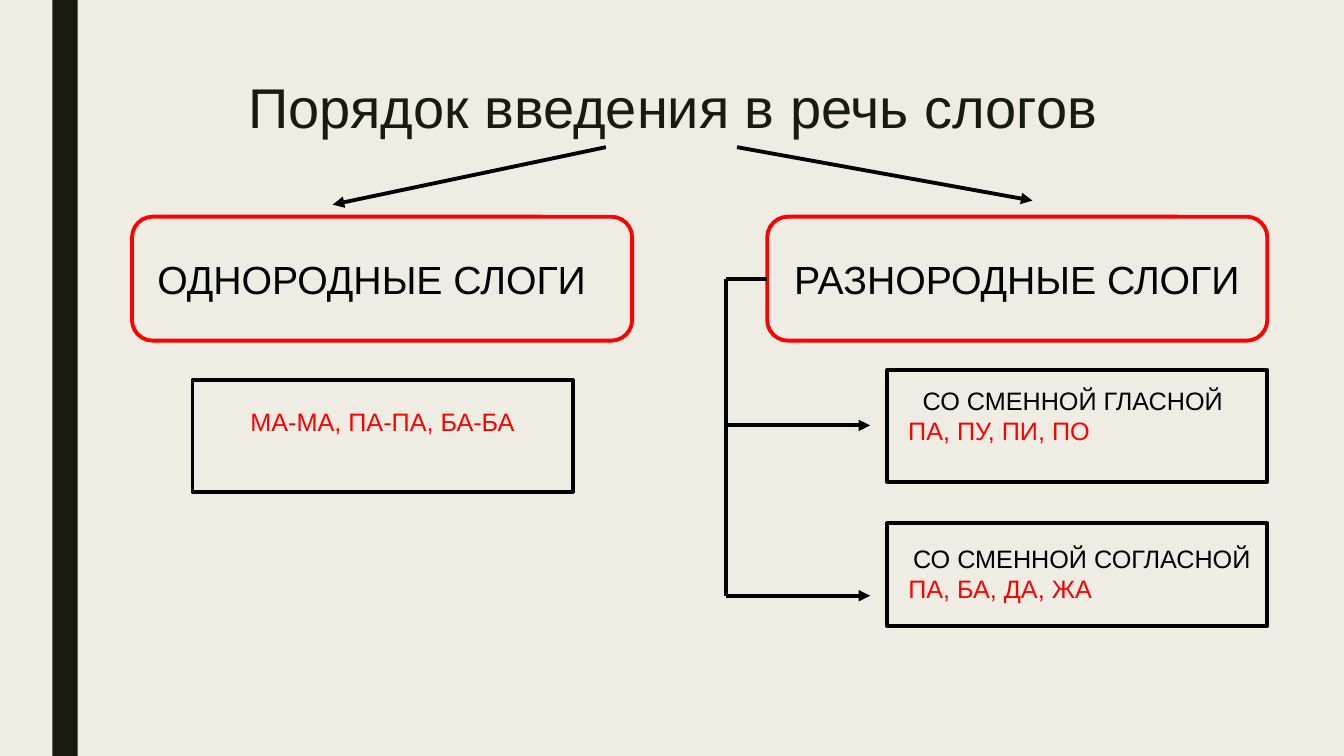
import pptx
import pptx.dml.color
import pptx.enum.shapes
import pptx.enum.text
import pptx.oxml.ns
import pptx.util
from lxml import etree

PX = 9144
SHAPES = pptx.enum.shapes.MSO_SHAPE
ALIGN = pptx.enum.text.PP_ALIGN
AUTO = pptx.enum.text.MSO_AUTO_SIZE
qn = pptx.oxml.ns.qn


def px(*values):
    return [pptx.util.Emu(v * PX) for v in values]


def color(value):
    return pptx.dml.color.RGBColor.from_string(value)


class Deck:
    font = "Arial"
    ink = "000000"
    dark = "191B0E"
    red = "FF0000"
    paper = "EFEDE3"
    line_width = 2.75

    def __init__(self, width, height):
        self.prs = pptx.Presentation()
        self.prs.slide_width, self.prs.slide_height = px(width, height)
        self.s = self.prs.slides.add_slide(self.prs.slide_layouts[5])
        fill = self.s.background.fill
        fill.solid()
        fill.fore_color.rgb = color(self.paper)

    def add_lines(self, tf, lines, size, auto_size):
        tf.word_wrap = True
        tf.auto_size = auto_size
        tf.vertical_anchor = pptx.enum.text.MSO_ANCHOR.TOP
        for i, (text, ink, align) in enumerate(lines):
            p = tf.add_paragraph() if i else tf.paragraphs[0]
            p.alignment = align
            r = p.add_run()
            r.text = text
            r.font.name = self.font
            r.font.size = pptx.util.Pt(size)
            r.font.color.rgb = color(ink)

    def title(self, text, x, y, w, h):
        sp = self.s.shapes.title
        sp.left, sp.top, sp.width, sp.height = px(x, y, w, h)
        self.add_lines(sp.text_frame, [(text, self.dark, ALIGN.CENTER)], 40, AUTO.NONE)
        sp.text_frame.paragraphs[0].line_spacing = 0.89

    def text(self, lines, x, y, w, h, size):
        sp = self.s.shapes.add_textbox(*px(x, y, w, h))
        self.add_lines(sp.text_frame, lines, size, AUTO.SHAPE_TO_FIT_TEXT)

    def bar(self, x, y, w, h):
        sp = self.s.shapes.add_shape(SHAPES.RECTANGLE, *px(x, y, w, h))
        sp.shadow.inherit = False
        sp.fill.solid()
        sp.fill.fore_color.rgb = color(self.dark)
        sp.line.fill.background()

    def frame(self, kind, ink, x, y, w, h):
        sp = self.s.shapes.add_shape(kind, *px(x, y, w, h))
        sp.shadow.inherit = False
        sp.fill.background()
        sp.line.color.rgb = color(ink)
        sp.line.width = pptx.util.Pt(self.line_width)

    def line(self, x1, y1, x2, y2, arrow=False):
        straight = pptx.enum.shapes.MSO_CONNECTOR.STRAIGHT
        c = self.s.shapes.add_connector(straight, *px(x1, y1, x2, y2))
        c.line.color.rgb = color(self.ink)
        c.line.width = pptx.util.Pt(self.line_width)
        props = c.element.spPr
        if arrow:
            etree.SubElement(props.find(qn("a:ln")), qn("a:tailEnd"), type="triangle")
        etree.SubElement(props, qn("a:effectLst"))


def main():
    deck = Deck(1333, 750)
    deck.bar(52, 0, 25, 750)
    deck.title("Порядок введения в речь слогов ", 150, 75, 1050, 162)

    for frame_x, text_x, label in (
        (131, 131, "ОДНОРОДНЫЕ СЛОГИ "),
        (761, 771, "РАЗНОРОДНЫЕ СЛОГИ "),
    ):
        deck.frame(SHAPES.ROUNDED_RECTANGLE, deck.red, frame_x, 215, 496, 123)
        deck.text([(label, deck.ink, ALIGN.CENTER)], text_x, 248, 486, 57, 28)

    deck.frame(SHAPES.RECTANGLE, deck.ink, 191, 377, 377, 111)
    deck.text([("МА-МА, ПА-ПА, БА-БА", deck.red, ALIGN.CENTER)], 191, 398, 377, 40, 18)

    for frame_y, frame_h, text_y, text_w, heading, syllables in (
        (367, 111, 377, 353, "СО СМЕННОЙ ГЛАСНОЙ ", "ПА, ПУ, ПИ, ПО"),
        (519, 102, 534, 371, "СО СМЕННОЙ СОГЛАСНОЙ ", "ПА, БА, ДА, ЖА"),
    ):
        deck.frame(SHAPES.RECTANGLE, deck.ink, 880, frame_y, 377, frame_h)
        lines = [(heading, deck.ink, ALIGN.CENTER), (syllables, deck.red, ALIGN.LEFT)]
        deck.text(lines, 891, text_y, text_w, 71, 18)

    deck.line(601, 146, 330, 203, arrow=True)
    deck.line(731, 146, 1024, 199, arrow=True)

    trunk_x, trunk_top, trunk_bottom = 720, 277, 591
    deck.line(trunk_x, trunk_top, trunk_x, trunk_bottom)
    deck.line(trunk_x, trunk_top, 761, trunk_top)
    for branch_y in (422, trunk_bottom):
        deck.line(trunk_x, branch_y, 863, branch_y, arrow=True)

    deck.prs.save("out.pptx")


if __name__ == "__main__":
    main()
